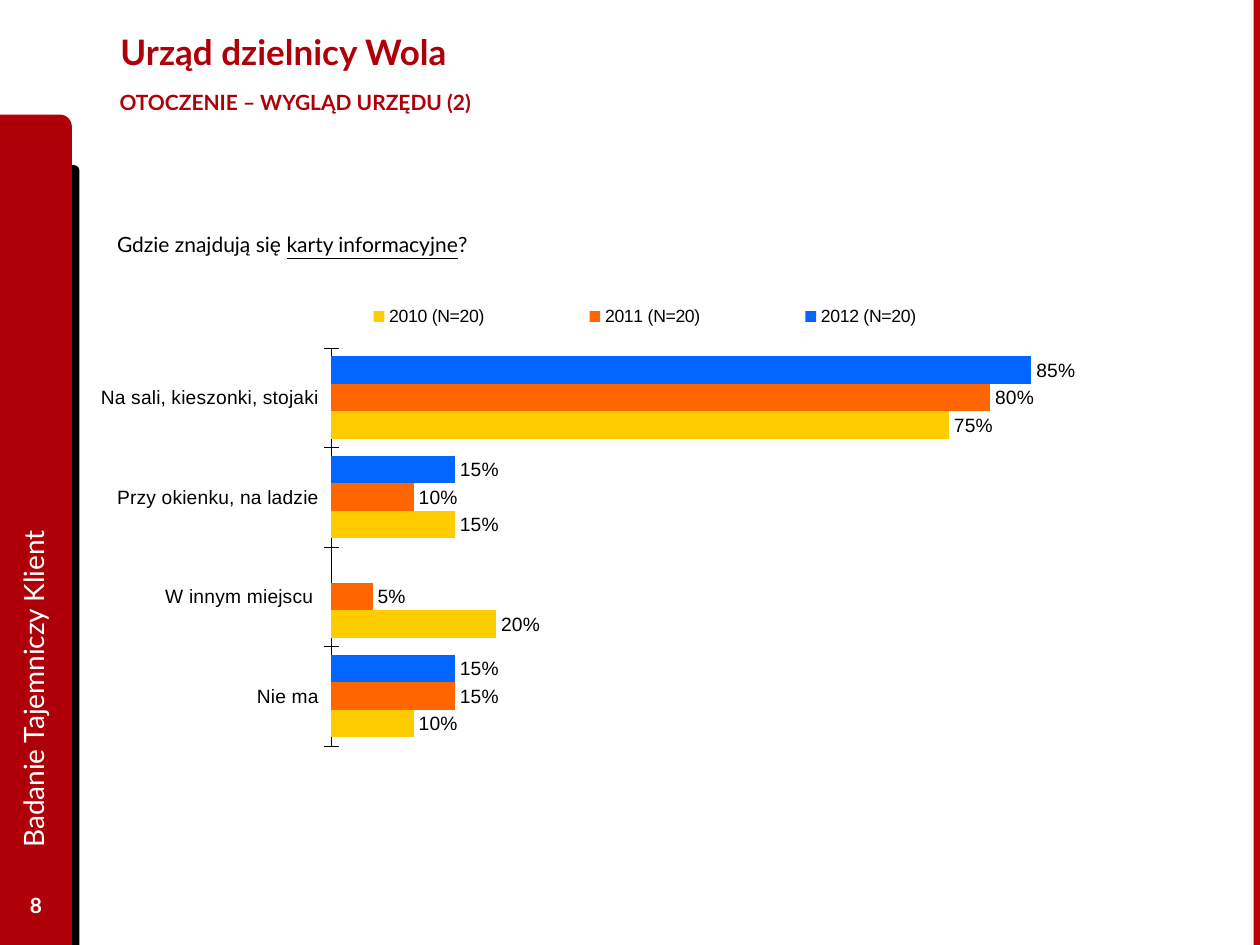
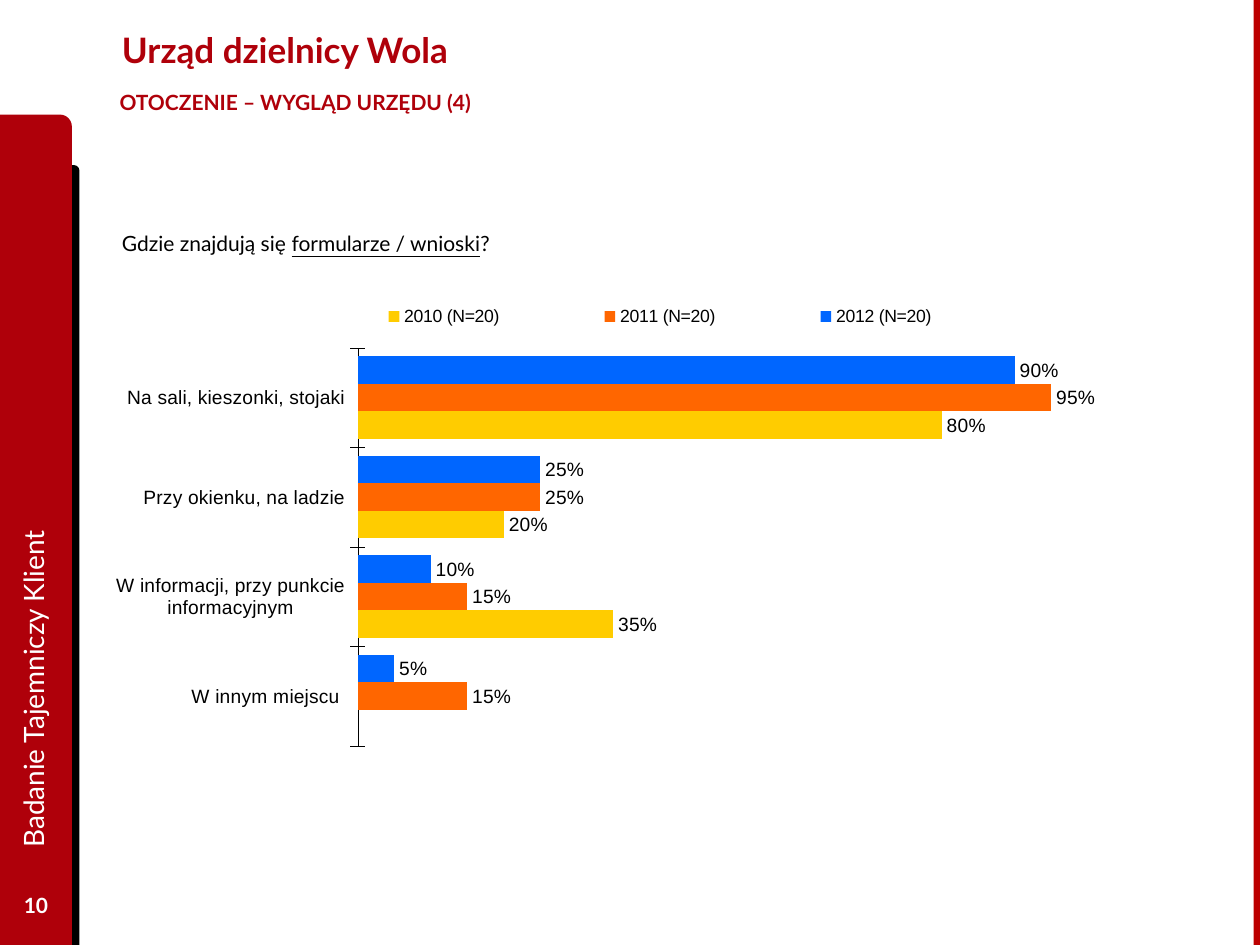
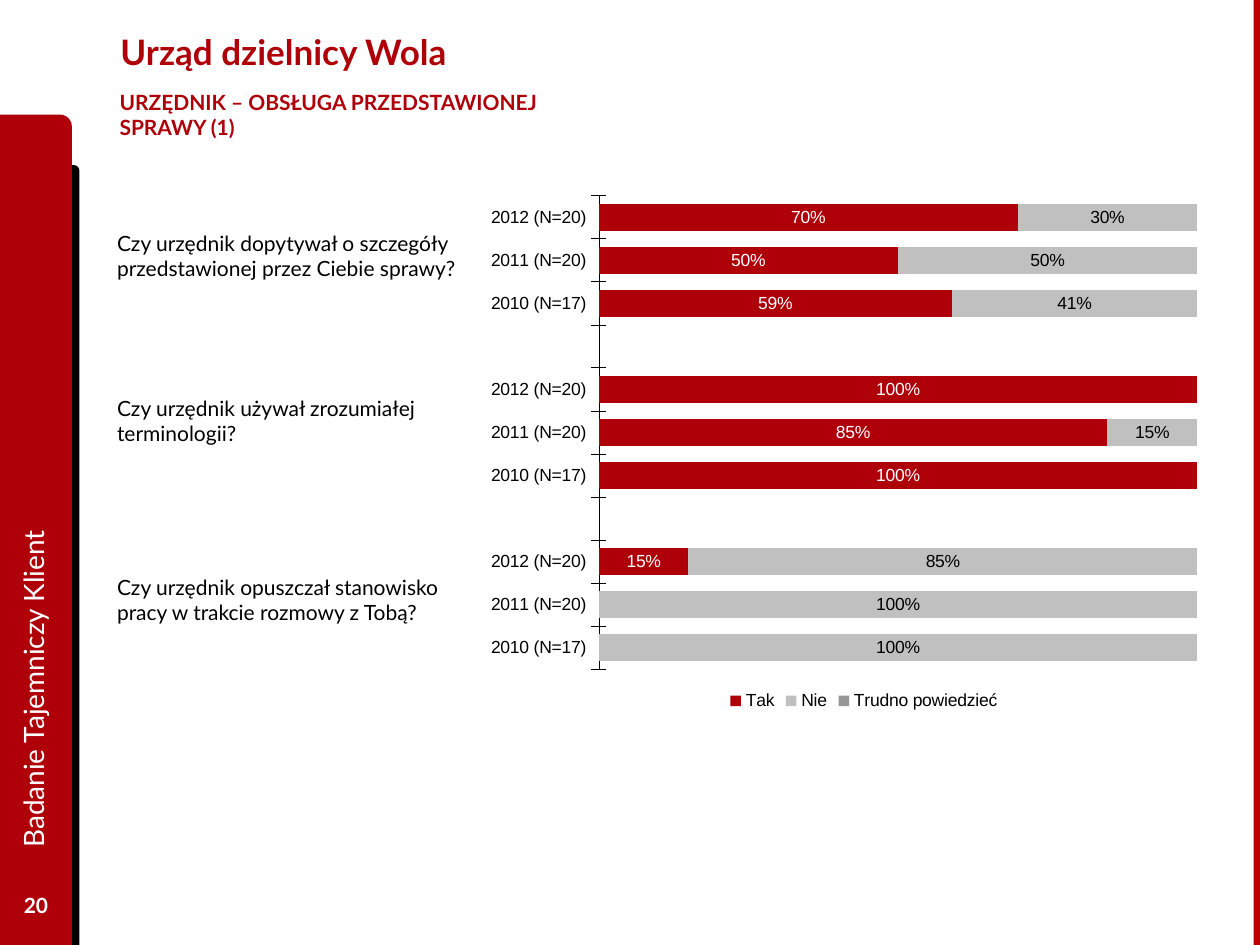
from dataclasses import dataclass
from typing import NamedTuple, Optional

from lxml import etree
from pptx import Presentation
from pptx import util as u
from pptx.chart import chart as ch
from pptx.chart import data
from pptx.dml.color import RGBColor
from pptx.enum import chart as ce
from pptx.enum import shapes, text
from pptx.oxml import ns
from pptx.slide import Slide


# Theme
@dataclass(frozen=True)
class Theme:
    red: str = "AF000A"
    strip_red: str = "BD0000"
    black: str = "000000"
    white: str = "FFFFFF"
    blue: str = "0066FF"
    orange: str = "FF6600"
    yellow: str = "FFCC00"
    light_grey: str = "C0C0C0"
    dark_grey: str = "969696"
    text_font: str = "Lato"
    chart_font: str = "Arial"
    title: float = 20
    side: float = 16
    body: float = 12
    bar_label: float = 11
    small: float = 10
    legend: float = 10.1


T = Theme()


class Box(NamedTuple):
    """Left, top, width and height in centimetres."""
    x: float
    y: float
    w: float
    h: float

    def cm(self) -> list[u.Length]:
        return [u.Cm(v) for v in self]


class Run(NamedTuple):
    text: str
    underline: bool = False


class Question(NamedTuple):
    box: Box
    runs: list[Run]


class Series(NamedTuple):
    name: str
    color: str
    values: list[Optional[float]]
    label_color: str = T.black
    label_size: float = T.bar_label


@dataclass
class BarChart:
    box: Box
    plot: Box  # fractions of the chart area
    categories: list[str]
    series: list[Series]
    stacked: bool = False


@dataclass
class Page:
    number: int
    subtitle: str
    questions: list[Question]
    chart: BarChart
    title_box: Box = Box(2.18, 0.13, 19.74, 1.83)


class Band(NamedTuple):
    kind: shapes.MSO_SHAPE
    box: Box
    color: str


# Shared layout
ROUND_ONE = shapes.MSO_SHAPE.ROUND_1_RECTANGLE
BANDS = [
    Band(ROUND_ONE, Box(0.99, 3.33, 0.61, 15.72), T.black),
    Band(ROUND_ONE, Box(0, 2.31, 1.45, 16.74), T.red),
    Band(shapes.MSO_SHAPE.RECTANGLE, Box(25.27, 0, 0.13, 19.05), T.strip_red),
]
SUBTITLE_BOX = Box(1.9, 1.68, 9.78, 0.84)
NUMBER_BOX = Box(0, 17.73, 1.45, 1.02)
SIDE_BOX = Box(-6.65, 9.37, 14.63, 1.3)
TOP_LEGEND = Box(0.15, 0, 0.65, 0.08)


def add_band(s: Slide, band: Band) -> None:
    sp = s.shapes.add_shape(band.kind, *band.box.cm())
    sp.shadow.inherit = False
    sp.fill.solid()
    sp.fill.fore_color.rgb = RGBColor.from_string(band.color)
    sp.line.fill.background()


def add_text(s: Slide, box: Box, runs: list[Run], size: float, color: str,
             bold: bool = False, middle: bool = False, centred: bool = False,
             wrap: bool = True, side_inset: float = 0.25, grow: bool = False,
             rotation: float = 0) -> None:
    sp = s.shapes.add_textbox(*box.cm())
    sp.rotation = rotation
    tf = sp.text_frame
    tf.word_wrap = wrap
    tf.margin_left = tf.margin_right = u.Cm(side_inset)
    if grow:
        tf.auto_size = text.MSO_AUTO_SIZE.SHAPE_TO_FIT_TEXT
    if middle:
        tf.vertical_anchor = text.MSO_ANCHOR.MIDDLE
    p = tf.paragraphs[0]
    if centred:
        p.alignment = text.PP_ALIGN.CENTER
    for run in runs:
        r = p.add_run()
        r.text = run.text
        style_font(r.font, size, color, T.text_font)
        r.font.bold = bold
        if run.underline:
            r.font.underline = True


def style_font(font, size: float, color: str, name: str) -> None:
    font.size = u.Pt(size)
    font.name = name
    font.color.rgb = RGBColor.from_string(color)


# Charts
def set_layout(parent: etree._Element, index: int, box: Box, inner: bool = False) -> None:
    """Give a chart part a manual layout in fractions of the chart area."""
    for old in parent.findall(ns.qn("c:layout")):
        parent.remove(old)
    layout = etree.Element(ns.qn("c:layout"))
    parent.insert(index, layout)
    manual = etree.SubElement(layout, ns.qn("c:manualLayout"))
    entries = [("layoutTarget", "inner")] if inner else []
    entries += [("xMode", "edge"), ("yMode", "edge")]
    entries += [(key, str(value)) for key, value in zip("xywh", box)]
    for tag, value in entries:
        etree.SubElement(manual, ns.qn(f"c:{tag}")).set("val", value)


def style_axes(chart: ch.Chart, stacked: bool) -> None:
    cat = chart.category_axis
    cat.reverse_order = True
    cat.major_tick_mark = ce.XL_TICK_MARK.CROSS
    cat.format.line.color.rgb = RGBColor.from_string(T.black)
    cat.format.line.width = u.Pt(0.23)
    style_font(cat.tick_labels.font, T.small if stacked else T.bar_label,
               T.black, T.chart_font)
    val = chart.value_axis
    val.visible = False
    val.has_major_gridlines = False
    val.minimum_scale = 0
    if stacked:
        val.maximum_scale = 1
        val.major_unit = 0.2


def add_bar_chart(s: Slide, bars: BarChart) -> None:
    cd = data.CategoryChartData(number_format="0%")
    cd.categories = bars.categories
    for item in bars.series:
        cd.add_series(item.name, item.values)
    kind = ce.XL_CHART_TYPE.BAR_STACKED if bars.stacked else ce.XL_CHART_TYPE.BAR_CLUSTERED
    chart = s.shapes.add_chart(kind, *bars.box.cm(), cd).chart
    chart.has_title = False
    style_font(chart.font, T.small if bars.stacked else T.bar_label, T.black, T.chart_font)
    style_axes(chart, bars.stacked)

    plot = chart.plots[0]
    plot.gap_width = 60
    plot.vary_by_categories = False
    if bars.stacked:
        plot.overlap = 100
    for series, item in zip(plot.series, bars.series):
        series.format.fill.solid()
        series.format.fill.fore_color.rgb = RGBColor.from_string(item.color)
        series.invert_if_negative = False
        labels = series.data_labels
        labels.show_value = True
        labels.number_format = "0%"
        labels.number_format_is_linked = False
        labels.position = (ce.XL_LABEL_POSITION.CENTER if bars.stacked
                           else ce.XL_LABEL_POSITION.OUTSIDE_END)
        style_font(labels.font, item.label_size, item.label_color, T.chart_font)

    chart.has_legend = True
    legend = chart.legend
    legend.position = ce.XL_LEGEND_POSITION.BOTTOM if bars.stacked else ce.XL_LEGEND_POSITION.TOP
    legend.include_in_layout = False
    style_font(legend.font, T.small if bars.stacked else T.legend, T.black, T.chart_font)
    if not bars.stacked:
        set_layout(legend._element, 1, TOP_LEGEND)
    plot_area = chart._chartSpace.find(".//" + ns.qn("c:plotArea"))
    set_layout(plot_area, 0, bars.plot, inner=True)


def year_series(*values: list[Optional[float]]) -> list[Series]:
    """One series a year, newest first."""
    years = zip((2012, 2011, 2010), (T.blue, T.orange, T.yellow), values)
    return [Series(f"{year} (N=20)", color, row) for year, color, row in years]


# Content
YEARS = ["2012 (N=20)", "2011 (N=20)", "2010 (N=17)"]
PAGES = [
    Page(
        8, "OTOCZENIE – WYGLĄD URZĘDU (2)",
        [Question(Box(2.11, 4.55, 15.62, 0.76),
                  [Run("Gdzie znajdują się "), Run("karty informacyjne", True), Run("?")])],
        BarChart(
            Box(2.03, 6.02, 23.04, 9.02), Box(0.2, 0.11, 0.65, 0.89),
            ["Na sali, kieszonki, stojaki", "Przy okienku, na ladzie",
             "W innym miejscu ", "Nie ma"],
            year_series([0.85, 0.15, None, 0.15],
                        [0.8, 0.1, 0.05, 0.15],
                        [0.75, 0.15, 0.2, 0.1]))),
    Page(
        10, "OTOCZENIE – WYGLĄD URZĘDU (4)",
        [Question(Box(2.21, 4.52, 10.01, 0.76),
                  [Run("Gdzie znajdują się "), Run("formularze / wnioski", True), Run("?")])],
        BarChart(
            Box(2.34, 6.02, 23.04, 9.02), Box(0.21, 0.11, 0.64, 0.89),
            ["Na sali, kieszonki, stojaki", "Przy okienku, na ladzie",
             "W informacji, przy punkcie informacyjnym", "W innym miejscu "],
            year_series([0.9, 0.25, 0.1, 0.05],
                        [0.95, 0.25, 0.15, 0.15],
                        [0.8, 0.2, 0.35, None])),
        Box(2.21, 0.08, 19.74, 1.83)),
    Page(
        20, "URZĘDNIK – OBSŁUGA PRZEDSTAWIONEJ SPRAWY (1)",
        [Question(Box(2.11, 4.52, 8.2, 1.27),
                  [Run("Czy urzędnik dopytywał o szczegóły przedstawionej przez Ciebie sprawy?")]),
         Question(Box(2.11, 7.85, 8.2, 1.27),
                  [Run("Czy urzędnik używał zrozumiałej terminologii?")]),
         Question(Box(2.11, 11.46, 7.44, 1.27),
                  [Run("Czy urzędnik opuszczał stanowisko pracy w trakcie rozmowy z Tobą?")])],
        BarChart(
            Box(9.78, 3.94, 15.27, 10.49), Box(0.15, 0, 0.79, 0.91),
            [*YEARS, "", *YEARS, "", *YEARS],
            [Series("Tak", T.red,
                    [0.7, 0.5, 0.59, None, 1, 0.85, 1, None, 0.15, None, None],
                    T.white, T.small),
             Series("Nie", T.light_grey,
                    [0.3, 0.5, 0.41, None, None, 0.15, None, None, 0.85, 1, 1],
                    T.black, T.small),
             Series("Trudno powiedzieć", T.dark_grey, [None] * 11, T.black, T.small)],
            stacked=True)),
]


def add_page(prs, page: Page) -> None:
    s = prs.slides.add_slide(prs.slide_layouts[6])
    for band in BANDS:
        add_band(s, band)
    # Heading
    add_text(s, page.title_box, [Run("Urząd dzielnicy Wola")], T.title, T.red,
             bold=True, middle=True)
    add_text(s, SUBTITLE_BOX, [Run(page.subtitle)], T.body, T.red,
             bold=True, wrap=False, side_inset=0.51)
    # Body
    for question in page.questions:
        add_text(s, question.box, question.runs, T.body, T.black, grow=True)
    add_bar_chart(s, page.chart)
    # Side band texts
    add_text(s, NUMBER_BOX, [Run(str(page.number))], T.body, T.white,
             bold=True, middle=True, centred=True)
    add_text(s, SIDE_BOX, [Run("Badanie Tajemniczy Klient")], T.side, T.white,
             middle=True, rotation=270)


def main() -> None:
    prs = Presentation()
    prs.slide_width, prs.slide_height = u.Cm(25.4), u.Cm(19.05)
    for page in PAGES:
        add_page(prs, page)
    prs.save("out.pptx")


if __name__ == "__main__":
    main()
